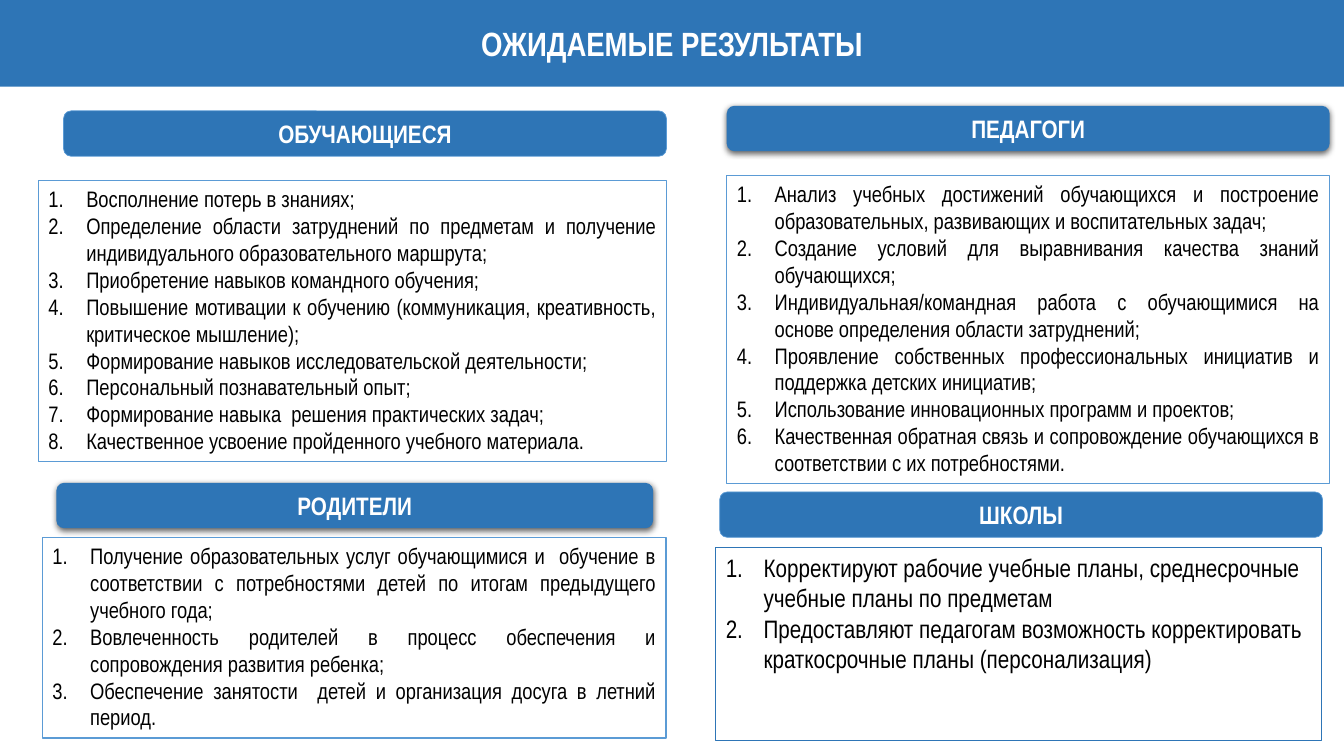
import pptx
import pptx.dml.color
import pptx.enum.shapes
import pptx.enum.text
import pptx.oxml
import pptx.oxml.ns
import pptx.util

Pt = pptx.util.Pt
ALIGN = pptx.enum.text.PP_ALIGN
ANCHOR = pptx.enum.text.MSO_ANCHOR
BLUE, LIGHT_BLUE, WHITE, BLACK = "2E75B6", "5B9BD5", "FFFFFF", "000000"
NAMESPACE = pptx.oxml.ns.nsdecls("a")

HEADINGS = [
    ("ОБУЧАЮЩИЕСЯ", (45.4, 79.2, 430.6, 32.4), False),
    ("ПЕДАГОГИ", (519.1, 75.6, 430.6, 32.4), True),
    ("РОДИТЕЛИ", (40.3, 344.9, 426.2, 32.4), True),
    ("ШКОЛЫ", (514.1, 351.4, 430.6, 32.4), False),
]

NARROW_LIST = {"size": 16, "align": ALIGN.JUSTIFY, "line": LIGHT_BLUE, "width": 1}
SCHOOL_LIST = {"size": 18, "align": ALIGN.LEFT, "line": BLUE, "width": 0.75}

LISTS = [
    ((27.4, 128.9, 448.6, 200.9), NARROW_LIST, [
        "Восполнение потерь в знаниях;",
        "Определение области затруднений по предметам и получение "
        "индивидуального образовательного маршрута;",
        "Приобретение навыков командного обучения;",
        "Повышение мотивации к обучению (коммуникация, креативность, "
        "критическое мышление);",
        "Формирование навыков исследовательской деятельности;",
        "Персональный познавательный опыт;",
        "Формирование навыка  решения практических задач;",
        "Качественное усвоение пройденного учебного материала.",
    ]),
    ((519.1, 125.3, 430.6, 220.3), NARROW_LIST, [
        "Анализ учебных достижений обучающихся и построение "
        "образовательных, развивающих и воспитательных задач;",
        "Создание условий для выравнивания качества знаний обучающихся;",
        "Индивидуальная/командная работа с обучающимися на основе "
        "определения области затруднений;",
        "Проявление собственных профессиональных инициатив и "
        "поддержка детских инициатив;",
        "Использование инновационных программ и проектов;",
        "Качественная обратная связь и сопровождение обучающихся в "
        "соответствии с их потребностями.",
    ]),
    ((30.2, 383.8, 445.7, 143.3), NARROW_LIST, [
        "Получение образовательных услуг обучающимися и  обучение в "
        "соответствии с потребностями детей по итогам предыдущего учебного года;",
        "Вовлеченность родителей в процесс обеспечения и "
        "сопровождения развития ребенка;",
        "Обеспечение занятости  детей и организация досуга в летний период.",
    ]),
    ((511.2, 391, 432.7, 138.2), SCHOOL_LIST, [
        "Корректируют рабочие учебные планы, среднесрочные "
        "учебные планы по предметам",
        "Предоставляют педагогам возможность корректировать "
        "краткосрочные планы (персонализация)",
    ]),
]


def set_values(target, values):
    for name, value in values.items():
        setattr(target, name, value)


def color(text):
    return pptx.dml.color.RGBColor.from_string(text)


def place(box, bounds):
    names = ("left", "top", "width", "height")
    set_values(box, dict(zip(names, map(Pt, bounds))))


def paint(box, fill, line=None, width=0):
    box.fill.solid()
    box.fill.fore_color.rgb = color(fill)
    if line:
        box.line.color.rgb = color(line)
        box.line.width = Pt(width)
    else:
        box.line.fill.background()


def prepare_frame(box, anchor):
    set_values(box.text_frame, {
        "word_wrap": True,
        "auto_size": pptx.enum.text.MSO_AUTO_SIZE.NONE,
        "vertical_anchor": anchor,
    })


def write(para, text, size, ink, bold, align):
    set_values(para, {"alignment": align, "line_spacing": 1.0,
                      "space_before": Pt(0), "space_after": Pt(0)})
    span = para.add_run()
    span.text = text
    set_values(span.font, {"name": "Arial Narrow", "size": Pt(size), "bold": bold})
    span.font.color.rgb = color(ink)


def number(para):
    properties = para._p.get_or_add_pPr()
    properties.set("marL", str(Pt(27)))
    properties.set("indent", str(-Pt(27)))
    properties.append(pptx.oxml.parse_xml(
        f'<a:buFont {NAMESPACE} typeface="Arial Narrow"/>'))
    properties.append(pptx.oxml.parse_xml(
        f'<a:buAutoNum {NAMESPACE} type="arabicPeriod"/>'))


def cast_shadow(box):
    effects = box._element.spPr.find(pptx.oxml.ns.qn("a:effectLst"))
    effects.append(pptx.oxml.parse_xml(
        f'<a:outerShdw {NAMESPACE} blurRad="{Pt(4.5)}" dist="{Pt(1.5)}" '
        'dir="5400000" algn="ctr" rotWithShape="0"><a:srgbClr val="000000">'
        '<a:alpha val="63000"/></a:srgbClr></a:outerShdw>'))


def fill_title(box, text):
    place(box, (0, 0, 960, 61.9))
    paint(box, BLUE)
    prepare_frame(box, ANCHOR.MIDDLE)
    write(box.text_frame.paragraphs[0], text, 24, WHITE, True, ALIGN.CENTER)


def add_heading(page, text, bounds, shadowed):
    box = page.shapes.add_shape(
        pptx.enum.shapes.MSO_SHAPE.ROUNDED_RECTANGLE, *map(Pt, bounds))
    paint(box, BLUE, None if shadowed else LIGHT_BLUE, 0.5)
    box.shadow.inherit = False
    if shadowed:
        cast_shadow(box)
    prepare_frame(box, ANCHOR.MIDDLE)
    write(box.text_frame.paragraphs[0], text, 18, WHITE, True, ALIGN.CENTER)


def fill_list(box, bounds, style, items):
    place(box, bounds)
    paint(box, WHITE, style["line"], style["width"])
    prepare_frame(box, ANCHOR.TOP)
    frame = box.text_frame
    for index, item in enumerate(items):
        para = frame.add_paragraph() if index else frame.paragraphs[0]
        write(para, item, style["size"], BLACK, False, style["align"])
        number(para)


def main():
    deck = pptx.Presentation()
    set_values(deck, {"slide_width": Pt(960), "slide_height": Pt(540)})
    page = deck.slides.add_slide(deck.slide_layouts.get_by_name("Comparison"))
    title, *bodies = page.placeholders
    fill_title(title, "ОЖИДАЕМЫЕ РЕЗУЛЬТАТЫ")
    for body, (bounds, style, items) in zip(bodies, LISTS):
        fill_list(body, bounds, style, items)
    for text, bounds, shadowed in HEADINGS:
        add_heading(page, text, bounds, shadowed)
    deck.save("out.pptx")


if __name__ == "__main__":
    main()
